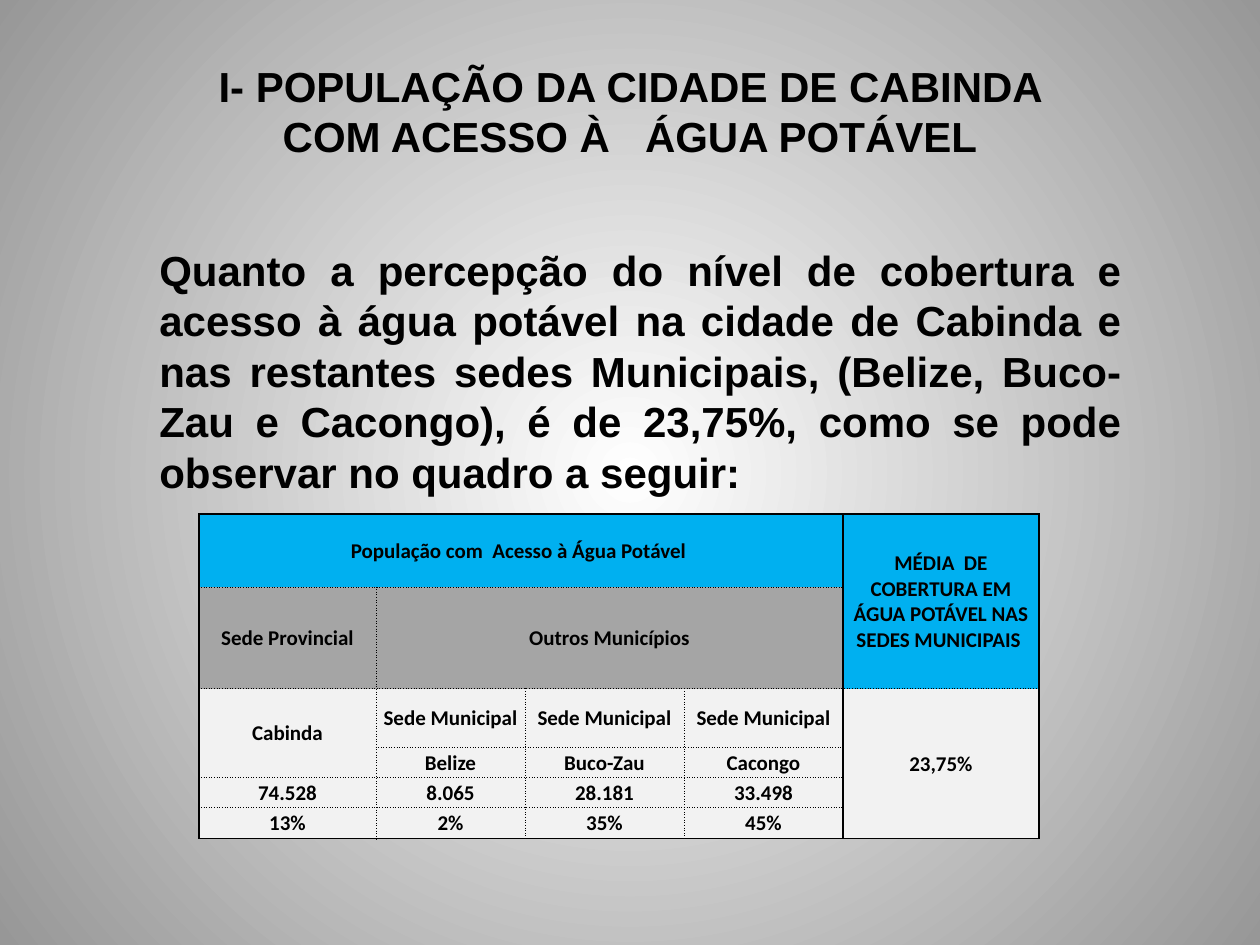
from lxml import etree
from pptx import Presentation
from pptx.dml.color import RGBColor
from pptx.enum.text import MSO_ANCHOR, MSO_AUTO_SIZE, PP_ALIGN
from pptx.oxml.ns import qn
from pptx.util import Pt

PX = 914400 // 126
CENTER, JUSTIFY = PP_ALIGN.CENTER, PP_ALIGN.JUSTIFY
MIDDLE = MSO_ANCHOR.MIDDLE
FIT_SHAPE = MSO_AUTO_SIZE.SHAPE_TO_FIT_TEXT

BLACK = RGBColor(0x00, 0x00, 0x00)
WHITE = RGBColor(0xFF, 0xFF, 0xFF)
EDGE_GRAY = RGBColor(0x97, 0x97, 0x97)
BLUE = RGBColor(0x00, 0xB0, 0xF0)
GRAY = RGBColor(0xA5, 0xA5, 0xA5)
PALE = RGBColor(0xF2, 0xF2, 0xF2)


def write(text_frame, text, size, font_name, alignment):
    text_frame.word_wrap = True
    paragraph = text_frame.paragraphs[0]
    paragraph.alignment = alignment
    run = paragraph.add_run()
    run.text = text
    run.font.size = Pt(size)
    run.font.name = font_name
    run.font.bold = True
    run.font.color.rgb = BLACK


def add_border(cell, tag, solid):
    line = etree.SubElement(cell._tc.get_or_add_tcPr(), qn(tag), w=str(Pt(1 if solid else 0.5)))
    fill = etree.SubElement(line, qn("a:solidFill"))
    etree.SubElement(fill, qn("a:srgbClr"), val=str(BLACK))
    etree.SubElement(line, qn("a:prstDash"), val="solid" if solid else "dot")


presentation = Presentation()
presentation.slide_width = 1260 * PX
presentation.slide_height = 945 * PX
slide = presentation.slides.add_slide(presentation.slide_layouts[5])

# Background: circular gradient from the centre
background = slide.background.fill
background.gradient()
for stop, position, color in zip(background.gradient_stops, (0, 1), (WHITE, EDGE_GRAY)):
    stop.position = position
    stop.color.rgb = color
gradient = next(slide.element.iter(qn("a:gradFill")))
circle = etree.Element(qn("a:path"), path="circle")
etree.SubElement(circle, qn("a:fillToRect"), l="50000", t="50000", r="50000", b="50000")
gradient.replace(gradient.find(qn("a:lin")), circle)

# Title
title = slide.shapes.title
title.left, title.top, title.width, title.height = 189 * PX, 53 * PX, 882 * PX, 115 * PX
title.text_frame.vertical_anchor = MIDDLE
title.text_frame.auto_size = FIT_SHAPE
write(title.text_frame, "I- POPULAÇÃO DA CIDADE DE CABINDA COM ACESSO À   ÁGUA POTÁVEL",
      24, "Arial", CENTER)

# Introduction
introduction = slide.shapes.add_textbox(147 * PX, 237 * PX, 987 * PX, 267 * PX)
introduction.text_frame.vertical_anchor = MIDDLE
introduction.text_frame.auto_size = FIT_SHAPE
write(introduction.text_frame,
      "Quanto a percepção do nível de cobertura e acesso à água potável na cidade de "
      "Cabinda e nas restantes sedes Municipais, (Belize, Buco-Zau e Cacongo), é de "
      "23,75%, como se pode observar no quadro a seguir:", 24, "Arial", JUSTIFY)

# Coverage table: None marks a cell covered by a merge
ROWS = [
    ["População com  Acesso à Água Potável ", None, None, None,
     "MÉDIA  DE COBERTURA EM ÁGUA POTÁVEL NAS SEDES MUNICIPAIS "],
    ["Sede Provincial", "Outros Municípios", None, None, None],
    ["Cabinda", "Sede Municipal", "Sede Municipal", "Sede Municipal", "23,75%"],
    [None, "Belize", "Buco-Zau", "Cacongo", None],
    ["74.528", "8.065", "28.181", "33.498", None],
    ["13%", "2%", "35%", "45%", None],
]
MERGES = [(0, 0, 0, 3), (0, 4, 1, 4), (1, 1, 1, 3), (2, 0, 3, 0), (2, 4, 5, 4)]
COLUMN_WIDTHS = [177, 149, 159, 159, 196]
ROW_HEIGHTS = [73, 53, 59, 30, 30, 31]

table = slide.shapes.add_table(
    len(ROWS), len(COLUMN_WIDTHS), 199 * PX, 514 * PX,
    sum(COLUMN_WIDTHS) * PX, sum(ROW_HEIGHTS) * PX).table
table.first_row = False
table.horz_banding = False
for column, width in zip(table.columns, COLUMN_WIDTHS):
    column.width = width * PX
for row, height in zip(table.rows, ROW_HEIGHTS):
    row.height = height * PX
for top, left, bottom, right in MERGES:
    table.cell(top, left).merge(table.cell(bottom, right))

for r, texts in enumerate(ROWS):
    for c, text in enumerate(texts):
        cell = table.cell(r, c)
        cell.vertical_anchor = MIDDLE
        cell.margin_left = cell.margin_right = cell.margin_top = PX
        cell.margin_bottom = 0

        # Solid frame around the table and its last column, dotted inside
        last_row, last_column = r, c
        if cell.is_merge_origin:
            last_row += cell.span_height - 1
            last_column += cell.span_width - 1
        add_border(cell, "a:lnL", c in (0, 4))
        add_border(cell, "a:lnR", last_column in (3, 4))
        add_border(cell, "a:lnT", r == 0)
        add_border(cell, "a:lnB", last_row == len(ROWS) - 1)

        cell.fill.solid()
        if r == 0 or (r == 1 and c == 4):
            cell.fill.fore_color.rgb = BLUE
        else:
            cell.fill.fore_color.rgb = GRAY if r == 1 else PALE
        if text:
            write(cell.text_frame, text, 12, "Calibri", CENTER)

presentation.save("out.pptx")
